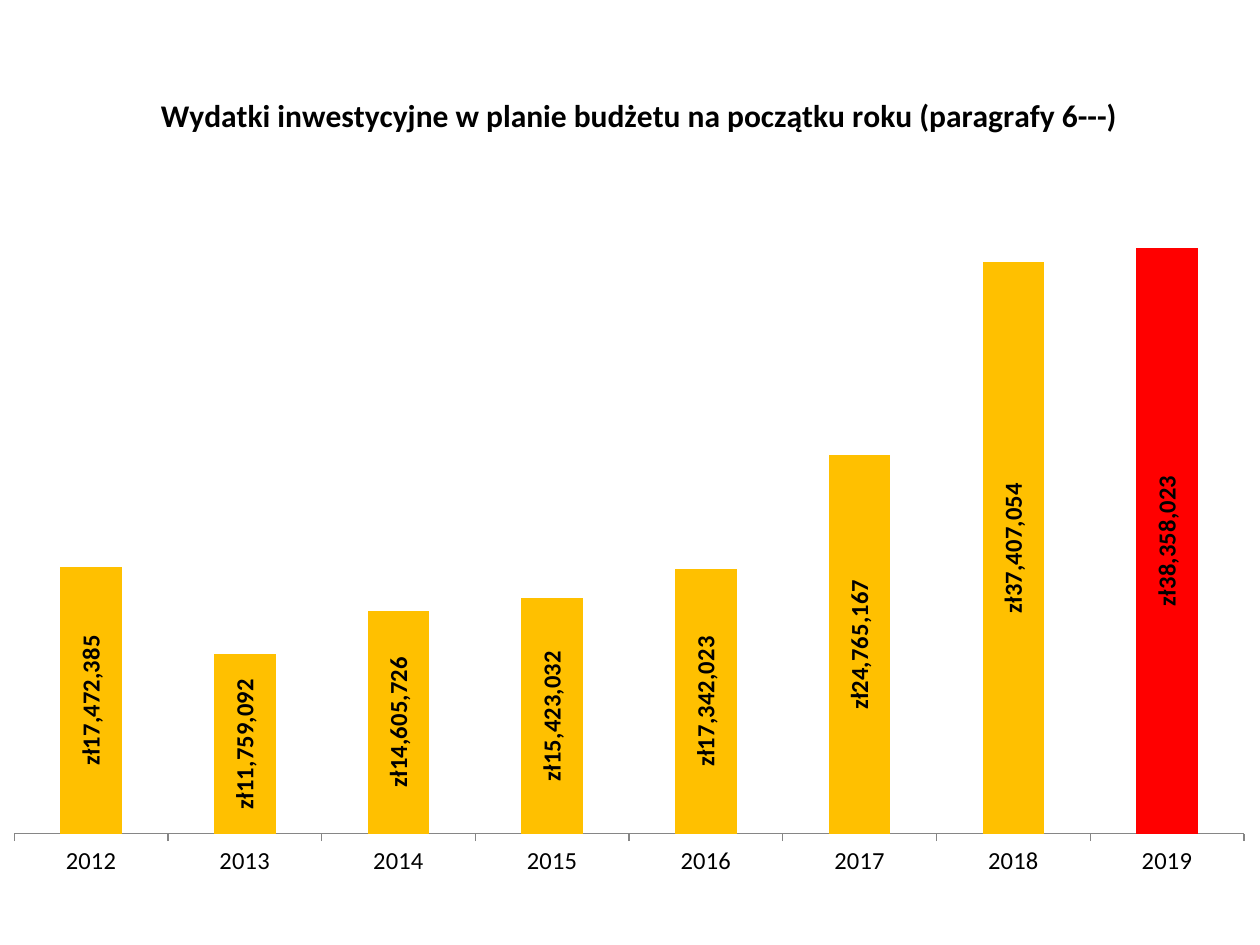
import pptx
import pptx.chart.data
import pptx.dml.color
import pptx.enum.chart
import pptx.oxml
import pptx.oxml.ns
import pptx.util

Pt = pptx.util.Pt
RGBColor = pptx.dml.color.RGBColor

TITLE = "Wydatki inwestycyjne w planie budżetu na początku roku (paragrafy 6---)"
SPENDING = {
    "2012": 17472385,
    "2013": 11759092,
    "2014": 14605726,
    "2015": 15423032,
    "2016": 17342023,
    "2017": 24765167,
    "2018": 37407054,
    "2019": 38358023,
}
HIGHLIGHTED_YEAR = "2019"
LABEL_FORMAT = '_("zł"* #,##0_);_("zł"* \\(#,##0\\);_("zł"* "-"_);_(@_)'

BLACK = RGBColor(0x00, 0x00, 0x00)
AMBER = RGBColor(0xFF, 0xC0, 0x00)
RED = RGBColor(0xFF, 0x00, 0x00)
AXIS_GRAY = RGBColor(0x86, 0x86, 0x86)


def style_font(font, size, bold=False):
    font.name = "Calibri"
    font.size = Pt(size)
    font.bold = bold
    font.color.rgb = BLACK


def manual_layout(parent, before, **fractions):
    """Place a chart part by fractions of the chart area, ahead of the child named."""
    for old in parent.findall(pptx.oxml.ns.qn("c:layout")):
        parent.remove(old)
    target = '<c:layoutTarget val="inner"/>' if "w" in fractions else ""
    modes = '<c:xMode val="edge"/><c:yMode val="edge"/>'
    values = "".join(f'<c:{key} val="{value}"/>' for key, value in fractions.items())
    layout = pptx.oxml.parse_xml(
        f'<c:layout {pptx.oxml.ns.nsdecls("c")}><c:manualLayout>'
        f"{target}{modes}{values}</c:manualLayout></c:layout>"
    )
    parent.find(pptx.oxml.ns.qn(before)).addprevious(layout)


presentation = pptx.Presentation()
presentation.slide_width = Pt(720)
presentation.slide_height = Pt(540)
slide = presentation.slides.add_slide(presentation.slide_layouts[6])

chart_data = pptx.chart.data.CategoryChartData()
chart_data.categories = list(SPENDING)
chart_data.add_series(TITLE, list(SPENDING.values()))
chart = slide.shapes.add_chart(
    pptx.enum.chart.XL_CHART_TYPE.COLUMN_CLUSTERED,
    Pt(-6.5), Pt(31), Pt(732), Pt(479), chart_data,
).chart
style_font(chart.font, 10)
chart.has_legend = False

chart.has_title = True
title_run = chart.chart_title.text_frame.paragraphs[0].add_run()
title_run.text = TITLE
style_font(title_run.font, 18, bold=True)
chart.chart_title.include_in_layout = False

category_axis = chart.category_axis
style_font(category_axis.tick_labels.font, 14)
category_axis.major_tick_mark = pptx.enum.chart.XL_TICK_MARK.OUTSIDE
category_axis.format.line.color.rgb = AXIS_GRAY
category_axis.format.line.width = Pt(0.75)

value_axis = chart.value_axis
value_axis.visible = False
value_axis.has_major_gridlines = False
value_axis.minimum_scale = 0
value_axis.maximum_scale = 45000000

plot = chart.plots[0]
plot.gap_width = 150
plot.vary_by_categories = False
series = plot.series[0]
series.invert_if_negative = False
series.format.fill.solid()
series.format.fill.fore_color.rgb = AMBER
highlight = series.points[list(SPENDING).index(HIGHLIGHTED_YEAR)].format.fill
highlight.solid()
highlight.fore_color.rgb = RED

labels = series.data_labels
labels.show_value = True
labels.number_format = LABEL_FORMAT
labels.number_format_is_linked = False
labels.position = pptx.enum.chart.XL_LABEL_POSITION.CENTER
style_font(labels.font, 14, bold=True)
for body in chart.element.xpath(".//c:dLbls/c:txPr/a:bodyPr"):
    body.set("rot", "-5400000")
    body.set("vert", "horz")

manual_layout(chart.element.xpath(".//c:chart/c:title")[0], "c:overlay", x=0.13, y=0.04)
manual_layout(chart.element.xpath(".//c:plotArea")[0], "c:barChart",
              x=0.02, y=0.11, w=0.96, h=0.82)

presentation.save("out.pptx")
